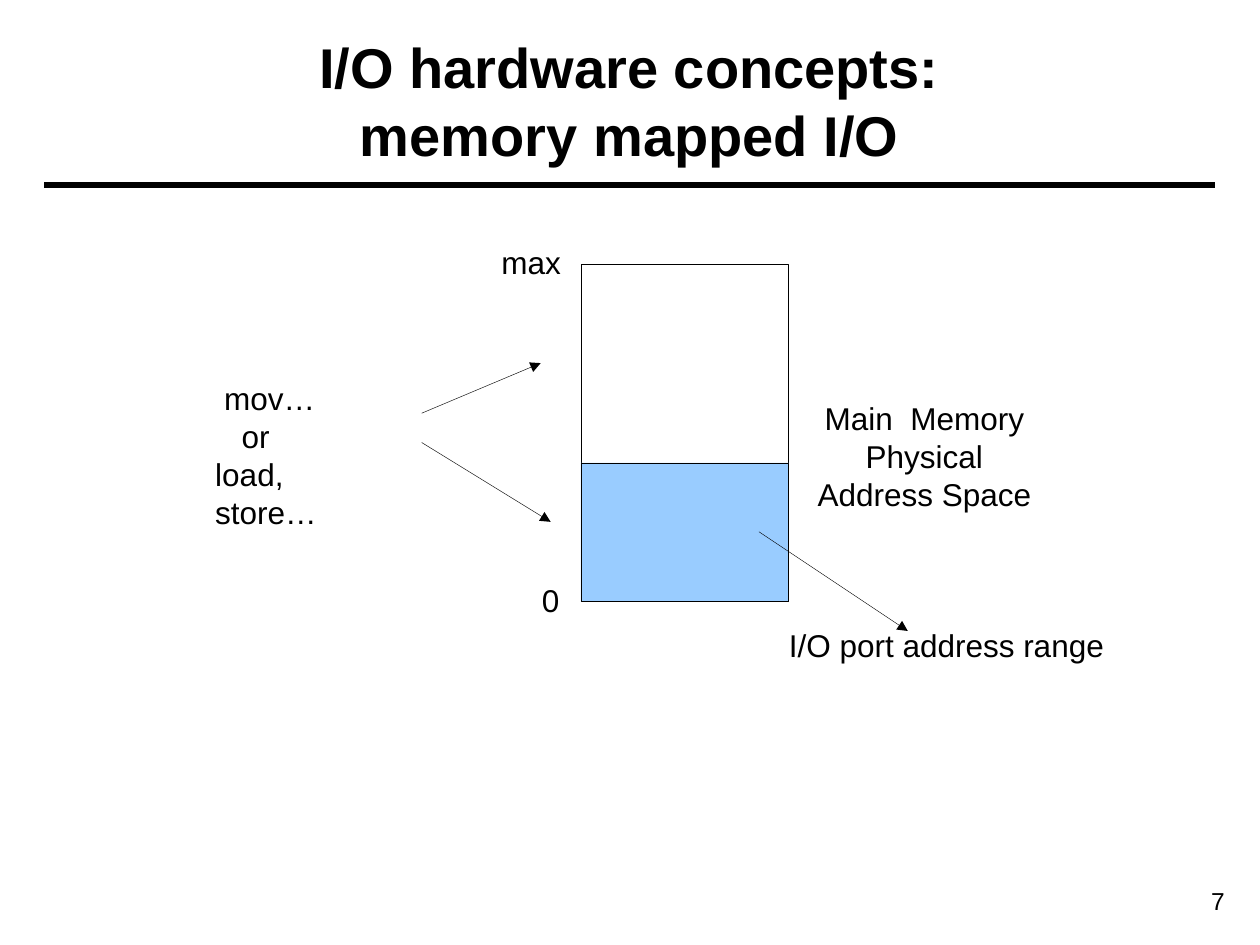
"""Build a slide on memory mapped I/O with an address space diagram."""
from dataclasses import dataclass

from lxml import etree
from pptx import Presentation
from pptx.dml.color import RGBColor
from pptx.enum.shapes import MSO_CONNECTOR, MSO_SHAPE
from pptx.enum.text import MSO_ANCHOR, MSO_AUTO_SIZE, PP_ALIGN
from pptx.oxml.ns import qn
from pptx.util import Cm, Pt

STRAIGHT = MSO_CONNECTOR.STRAIGHT
RECTANGLE = MSO_SHAPE.RECTANGLE
TOP, MIDDLE = MSO_ANCHOR.TOP, MSO_ANCHOR.MIDDLE
LEFT, CENTER, RIGHT = PP_ALIGN.LEFT, PP_ALIGN.CENTER, PP_ALIGN.RIGHT
FIT_SHAPE = MSO_AUTO_SIZE.SHAPE_TO_FIT_TEXT


@dataclass(frozen=True)
class Theme:
    font: str = "Arial"
    ink: RGBColor = RGBColor(0x00, 0x00, 0x00)
    port_fill: RGBColor = RGBColor(0x99, 0xCC, 0xFF)
    title_size: float = 32
    label_size: float = 18
    number_size: float = 14
    rule_width: float = 3
    thin_width: float = 0.25


THEME = Theme()


@dataclass(frozen=True)
class Para:
    text: str
    indent: float = 0


@dataclass(frozen=True)
class Label:
    box: tuple[float, float, float, float]
    paras: tuple[Para, ...]
    align: PP_ALIGN = CENTER
    size: float = THEME.label_size
    bold: bool = False
    wrap: bool = False
    anchor: MSO_ANCHOR = TOP


@dataclass(frozen=True)
class Line:
    start: tuple[float, float]
    end: tuple[float, float]
    width: float = THEME.thin_width
    arrow: bool = True


@dataclass(frozen=True)
class Block:
    box: tuple[float, float, float, float]
    fill: RGBColor | None = None


RULE = Line((0.89, 3.73), (24.49, 3.73), THEME.rule_width, False)
BLOCKS = (
    Block((11.71, 5.33, 4.19, 6.8)),
    Block((11.71, 9.33, 4.19, 2.8), THEME.port_fill),
)
ARROWS = (
    Line((15.3, 10.72), (18.3, 12.72)),
    Line((8.5, 8.33), (10.9, 7.32)),
    Line((8.5, 8.92), (11.1, 10.52)),
)
LABELS = (
    Label((22.3, 17.73, 2.64, 0.86), (Para("7"),), RIGHT, THEME.number_size, wrap=True),
    Label((0.89, 0.43, 23.6, 3.18), (Para("I/O hardware concepts:\nmemory mapped I/O"),),
          size=THEME.title_size, bold=True, wrap=True, anchor=MIDDLE),
    Label((16.21, 7.92, 4.85, 2.57), (Para("Main  Memory"), Para("Physical\nAddress Space"))),
    Label((10.67, 11.58, 0.86, 1.02), (Para("0"),)),
    Label((9.86, 4.78, 1.7, 1.02), (Para("max"),)),
    Label((15.65, 12.5, 6.86, 1.02), (Para("I/O port address range"),)),
    Label((4.09, 7.52, 4.09, 2.54),
          (Para("mov…", 0.18), Para("or", 0.53), Para("load, store…")), LEFT),
)


def add_label(s, label: Label) -> None:
    tf = s.shapes.add_textbox(*map(Cm, label.box)).text_frame
    tf.word_wrap = label.wrap
    tf.vertical_anchor = label.anchor
    if not label.wrap:
        tf.auto_size = FIT_SHAPE
    for i, para in enumerate(label.paras):
        p = tf.add_paragraph() if i else tf.paragraphs[0]
        p.alignment = label.align
        if para.indent:
            p._p.get_or_add_pPr().set("marL", str(Cm(para.indent)))
        for j, text in enumerate(para.text.split("\n")):
            if j:
                p.add_line_break()
            r = p.add_run()
            r.text = text
            r.font.name = THEME.font
            r.font.size = Pt(label.size)
            r.font.bold = label.bold
            r.font.color.rgb = THEME.ink


def add_block(s, block: Block) -> None:
    sp = s.shapes.add_shape(RECTANGLE, *map(Cm, block.box))
    sp.shadow.inherit = False
    sp.line.color.rgb = THEME.ink
    sp.line.width = Pt(THEME.thin_width)
    if block.fill is None:
        sp.fill.background()
    else:
        sp.fill.solid()
        sp.fill.fore_color.rgb = block.fill


def add_line(s, line: Line) -> None:
    sp = s.shapes.add_connector(STRAIGHT, *map(Cm, line.start + line.end))
    sp.line.color.rgb = THEME.ink
    sp.line.width = Pt(line.width)
    if line.arrow:
        etree.SubElement(sp.line._get_or_add_ln(), qn("a:tailEnd"), type="triangle")
    etree.SubElement(sp._element.spPr, qn("a:effectLst"))


def main() -> None:
    prs = Presentation()
    prs.slide_width, prs.slide_height = Cm(25.4), Cm(19.05)
    s = prs.slides.add_slide(prs.slide_layouts[6])
    add_line(s, RULE)
    for block in BLOCKS:
        add_block(s, block)
    for arrow in ARROWS:
        add_line(s, arrow)
    for label in LABELS:
        add_label(s, label)
    prs.save("out.pptx")


if __name__ == "__main__":
    main()
